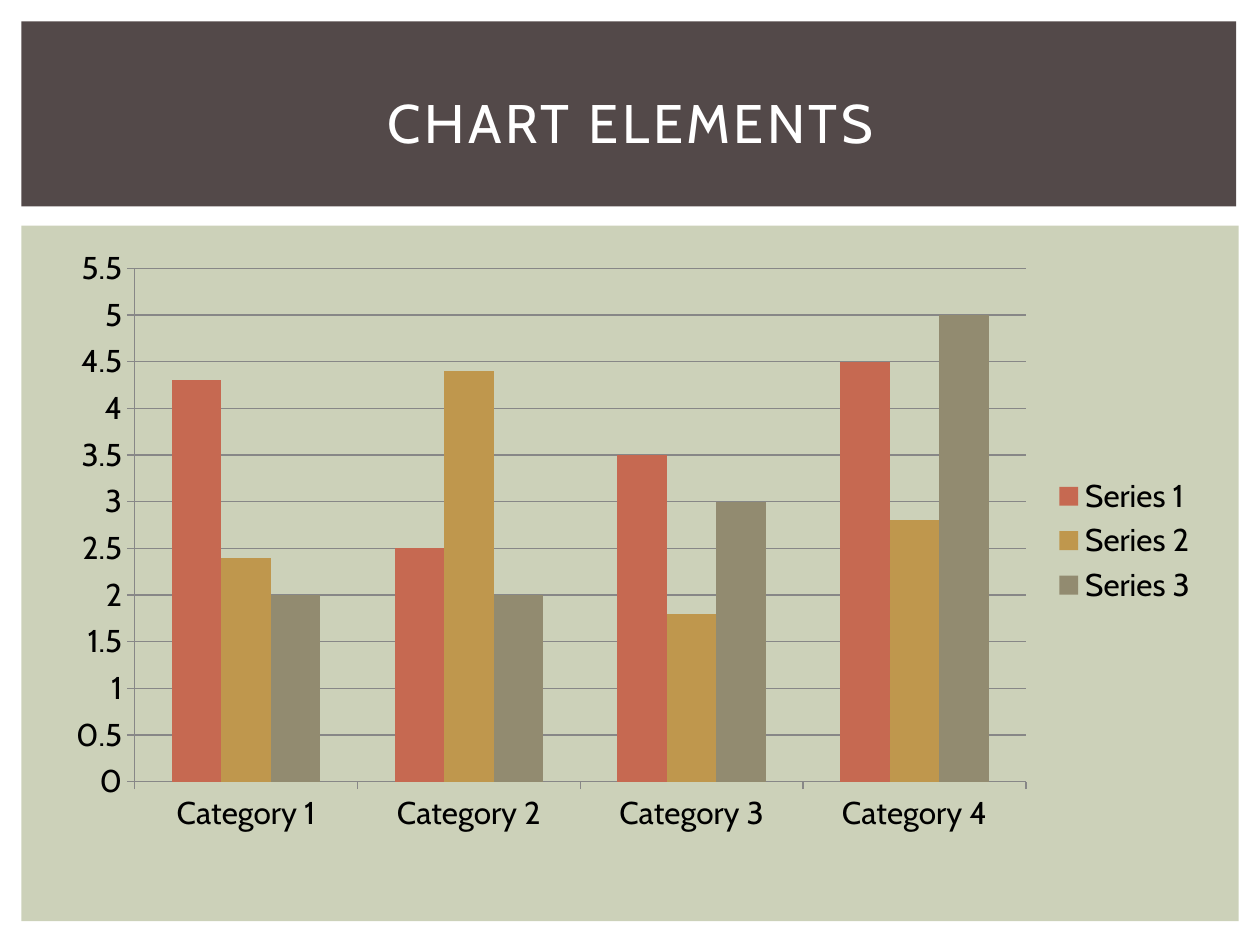
from dataclasses import dataclass

from pptx import Presentation
from pptx.chart.data import CategoryChartData
from pptx.dml.color import RGBColor
from pptx.enum.chart import XL_CHART_TYPE, XL_LEGEND_POSITION, XL_TICK_MARK
from pptx.enum.shapes import MSO_SHAPE
from pptx.enum.text import MSO_ANCHOR, PP_ALIGN
from pptx.util import Cm, Pt

RECTANGLE = MSO_SHAPE.RECTANGLE
CLUSTERED_COLUMNS = XL_CHART_TYPE.COLUMN_CLUSTERED
LEGEND_RIGHT = XL_LEGEND_POSITION.RIGHT
TICK_OUTSIDE = XL_TICK_MARK.OUTSIDE
MIDDLE = MSO_ANCHOR.MIDDLE
CENTER = PP_ALIGN.CENTER
BLANK_LAYOUT = 6


@dataclass(frozen=True)
class Theme:
    font: str = "Cabin"
    title_size: int = 31
    title_spacing: int = 200  # hundredths of a point
    chart_size: int = 18
    band: RGBColor = RGBColor(0x53, 0x49, 0x49)
    panel: RGBColor = RGBColor(0xCC, 0xD1, 0xB9)
    title_text: RGBColor = RGBColor(0xFF, 0xFF, 0xFF)
    chart_text: RGBColor = RGBColor(0x00, 0x00, 0x00)
    lines: RGBColor = RGBColor(0x87, 0x87, 0x87)
    series: tuple = (
        RGBColor(0xC6, 0x69, 0x51),
        RGBColor(0xBF, 0x97, 0x4D),
        RGBColor(0x92, 0x8B, 0x70),
    )


THEME = Theme()

# Regions in centimetres: left, top, width, height
TITLE_BAND = (0.43, 0.43, 24.49, 3.73)
CHART_PANEL = (0.43, 4.55, 24.54, 14.02)

CATEGORIES = ("Category 1", "Category 2", "Category 3", "Category 4")
SERIES = {
    "Series 1": (4.3, 2.5, 3.5, 4.5),
    "Series 2": (2.4, 4.4, 1.8, 2.8),
    "Series 3": (2, 2, 3, 5),
}


def add_background(slide, box, color):
    shape = slide.shapes.add_shape(RECTANGLE, *(Cm(length) for length in box))
    shape.shadow.inherit = False
    shape.fill.solid()
    shape.fill.fore_color.rgb = color
    shape.line.fill.background()


def style_axis(axis):
    axis.major_tick_mark = TICK_OUTSIDE
    axis.format.line.color.rgb = THEME.lines
    axis.format.line.width = Pt(0.75)


def add_title_band(slide, box, title):
    left, top, width, height = box
    add_background(slide, box, THEME.band)

    # Title text, slightly below the middle of the band
    text_box = slide.shapes.add_textbox(
        Cm(left + 0.64), Cm(top + 0.56), Cm(width - 1.2), Cm(height - 0.81)
    )
    text_frame = text_box.text_frame
    text_frame.word_wrap = True
    text_frame.vertical_anchor = MIDDLE
    text_frame.text = title
    paragraph = text_frame.paragraphs[0]
    paragraph.alignment = CENTER
    font = paragraph.runs[0].font
    font.name = THEME.font
    font.size = Pt(THEME.title_size)
    font.color.rgb = THEME.title_text
    font._element.set("spc", str(THEME.title_spacing))


def add_chart_panel(slide, box):
    left, top, width, height = box
    add_background(slide, box, THEME.panel)

    # Chart data and frame
    chart_data = CategoryChartData()
    chart_data.categories = CATEGORIES
    for name, values in SERIES.items():
        chart_data.add_series(name, values)
    chart = slide.shapes.add_chart(
        CLUSTERED_COLUMNS,
        Cm(left + 0.64), Cm(top + 0.23), Cm(width - 1.2), Cm(height - 1.78),
        chart_data,
    ).chart
    chart.has_title = False
    chart.font.name = THEME.font
    chart.font.size = Pt(THEME.chart_size)
    chart.font.color.rgb = THEME.chart_text

    # Columns
    plot = chart.plots[0]
    plot.gap_width = 150
    plot.overlap = 0
    plot.vary_by_categories = False
    for series, color in zip(plot.series, THEME.series):
        series.format.fill.solid()
        series.format.fill.fore_color.rgb = color

    # Axes and gridlines
    style_axis(chart.category_axis)
    value_axis = chart.value_axis
    style_axis(value_axis)
    value_axis.minimum_scale = 0
    value_axis.maximum_scale = 5.5
    value_axis.major_unit = 0.5
    value_axis.has_major_gridlines = True
    gridline = value_axis.major_gridlines.format.line
    gridline.color.rgb = THEME.lines
    gridline.width = Pt(0.75)

    # Legend
    chart.has_legend = True
    chart.legend.position = LEGEND_RIGHT
    chart.legend.include_in_layout = False


def main():
    presentation = Presentation()
    presentation.slide_width = Cm(25.4)
    presentation.slide_height = Cm(19.05)
    slide = presentation.slides.add_slide(presentation.slide_layouts[BLANK_LAYOUT])
    add_chart_panel(slide, CHART_PANEL)
    add_title_band(slide, TITLE_BAND, "CHART ELEMENTS")
    presentation.save("out.pptx")


if __name__ == "__main__":
    main()
